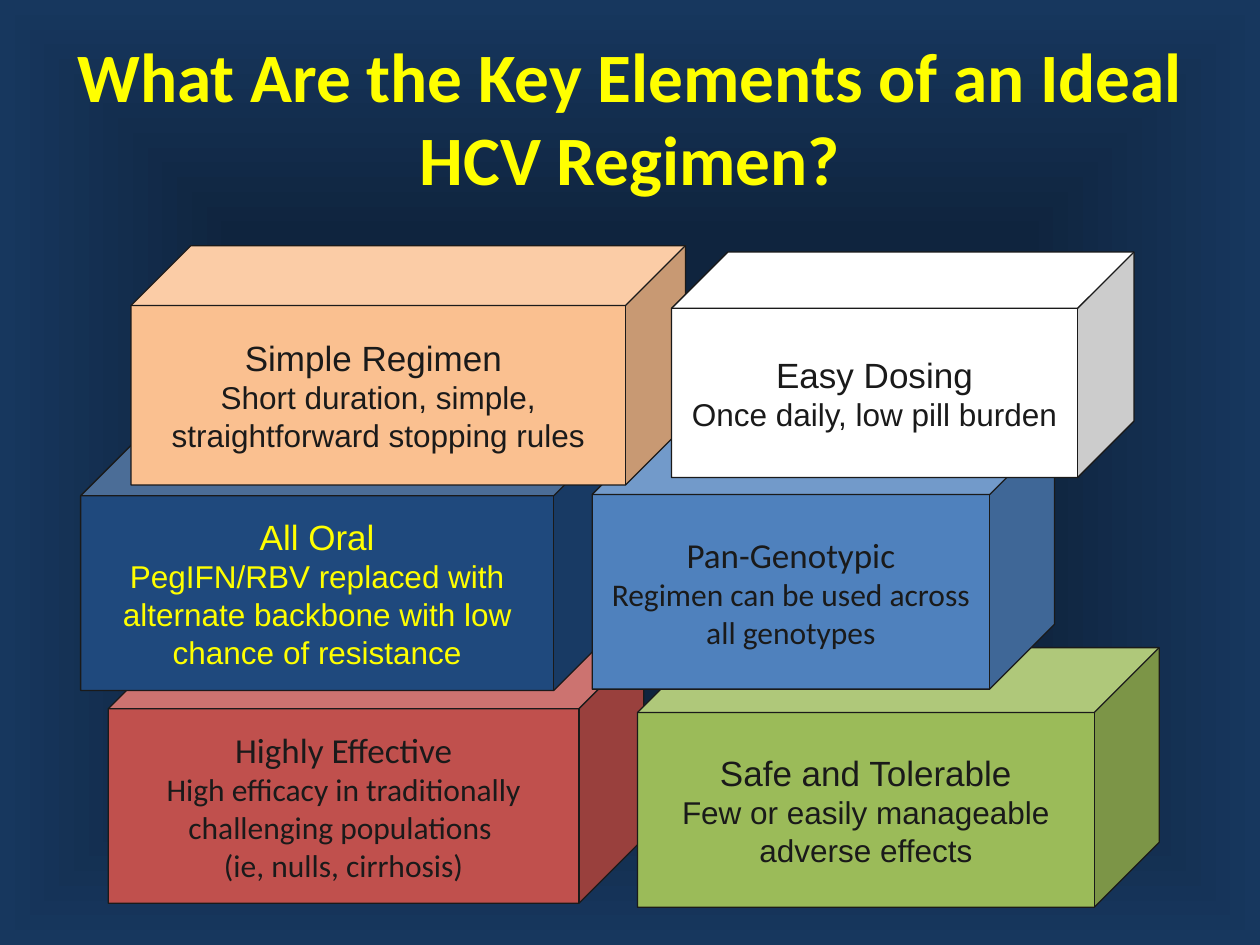
from dataclasses import dataclass

from lxml.etree import SubElement
from pptx import Presentation
from pptx.dml.color import RGBColor
from pptx.enum.shapes import MSO_SHAPE
from pptx.enum.text import MSO_ANCHOR, PP_ALIGN
from pptx.oxml.ns import qn
from pptx.slide import Slide
from pptx.text.text import TextFrame
from pptx.util import Inches, Pt

COLORS = {
    "center": "0F243E",
    "edge": "17375E",
    "yellow": "FFFF00",
    "ink": "1A1A1A",
    "red": "C0504D",
    "green": "9BBB59",
    "navy": "1F497D",
    "blue": "4F81BD",
    "peach": "FAC090",
    "white": "FFFFFF",
}


@dataclass
class Block:
    heading: str
    detail: str
    left: float
    top: float
    width: float
    height: float
    fill: str
    font: str = "Arial"
    text_color: str = "ink"


# Bottom row first, so that each row rests on the one below
BLOCKS = [
    Block("Highly Effective",
          "High efficacy in traditionally challenging populations \n(ie, nulls, cirrhosis)",
          0.86, 5.11, 4.25, 2.06, "red", font="Calibri"),
    Block("Safe and Tolerable", "Few or easily manageable adverse effects",
          5.06, 5.14, 4.14, 2.06, "green"),
    Block("All Oral",
          "PegIFN/RBV replaced with alternate backbone with low chance of resistance",
          0.64, 3.42, 4.27, 2.06, "navy", text_color="yellow"),
    Block("Pan-Genotypic", "Regimen can be used across all genotypes",
          4.7, 3.41, 3.67, 2.06, "blue", font="Calibri"),
    Block("Simple Regimen ", "Short duration, simple, straightforward stopping rules",
          1.04, 1.95, 4.4, 1.9, "peach"),
    Block("Easy Dosing", "Once daily, low pill burden",
          5.33, 2, 3.67, 1.79, "white"),
]


def rgb(name: str) -> RGBColor:
    return RGBColor.from_string(COLORS[name])


def write_paragraph(frame: TextFrame, text: str, size: float, font: str,
                    color: str, first: bool = True, bold: bool = False) -> None:
    paragraph = frame.paragraphs[0] if first else frame.add_paragraph()
    paragraph.alignment = PP_ALIGN.CENTER
    for index, line in enumerate(text.split("\n")):
        if index:
            paragraph.add_line_break()
        run = paragraph.add_run()
        run.text = line
        run.font.size = Pt(size)
        run.font.name = font
        run.font.bold = bold
        run.font.color.rgb = rgb(color)


def paint_background(slide: Slide) -> None:
    fill = slide.background.fill
    fill.gradient()
    for stop, position, color in zip(fill.gradient_stops, (0.5, 1), ("center", "edge")):
        stop.position = position
        stop.color.rgb = rgb(color)
    # Rectangular gradient around the middle of the slide
    gradient = slide.element.find(".//" + qn("a:gradFill"))
    gradient.remove(gradient.find(qn("a:lin")))
    rectangle = SubElement(gradient, qn("a:path"), {"path": "rect"})
    SubElement(rectangle, qn("a:fillToRect"), {side: "50000" for side in "ltrb"})


def add_title(slide: Slide, text: str) -> None:
    box = slide.shapes.add_textbox(Inches(0.5), Inches(0.3), Inches(9), Inches(1.25))
    frame = box.text_frame
    frame.word_wrap = True
    frame.vertical_anchor = MSO_ANCHOR.MIDDLE
    write_paragraph(frame, text, 39.6, "Calibri", "yellow", bold=True)


def add_block(slide: Slide, block: Block) -> None:
    shape = slide.shapes.add_shape(
        MSO_SHAPE.CUBE, Inches(block.left), Inches(block.top),
        Inches(block.width), Inches(block.height))
    shape.shadow.inherit = False
    shape.fill.solid()
    shape.fill.fore_color.rgb = rgb(block.fill)
    shape.line.color.rgb = rgb("ink")
    shape.line.width = Pt(0.75)
    frame = shape.text_frame
    frame.word_wrap = True
    frame.vertical_anchor = MSO_ANCHOR.MIDDLE
    write_paragraph(frame, block.heading, 20, block.font, block.text_color)
    write_paragraph(frame, block.detail, 18, block.font, block.text_color, first=False)


def main() -> None:
    presentation = Presentation()
    presentation.slide_width = Inches(10)
    presentation.slide_height = Inches(7.5)
    slide = presentation.slides.add_slide(presentation.slide_layouts[6])

    paint_background(slide)
    add_title(slide, "What Are the Key Elements of an Ideal HCV Regimen?")
    for block in BLOCKS:
        add_block(slide, block)

    presentation.save("out.pptx")


if __name__ == "__main__":
    main()
